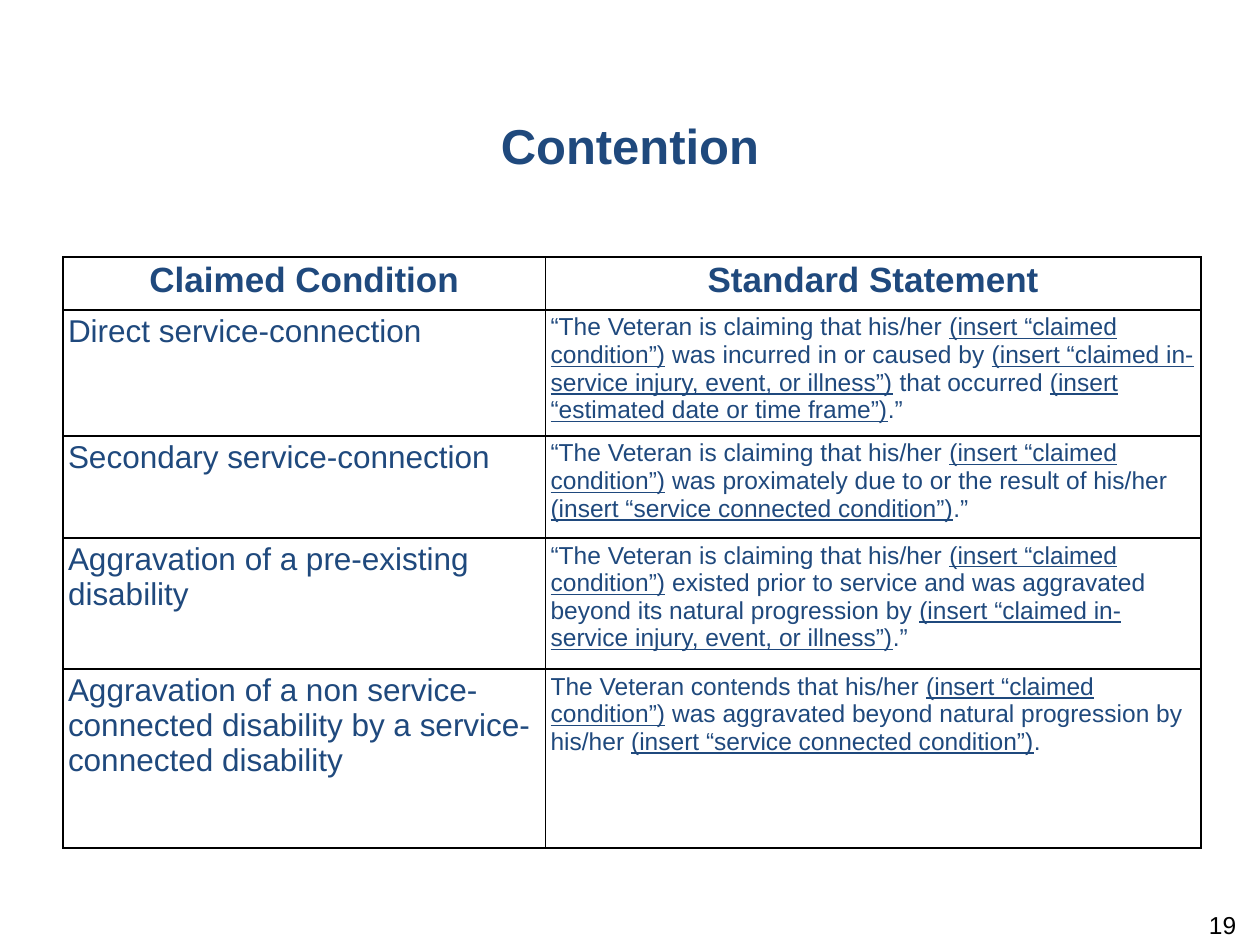
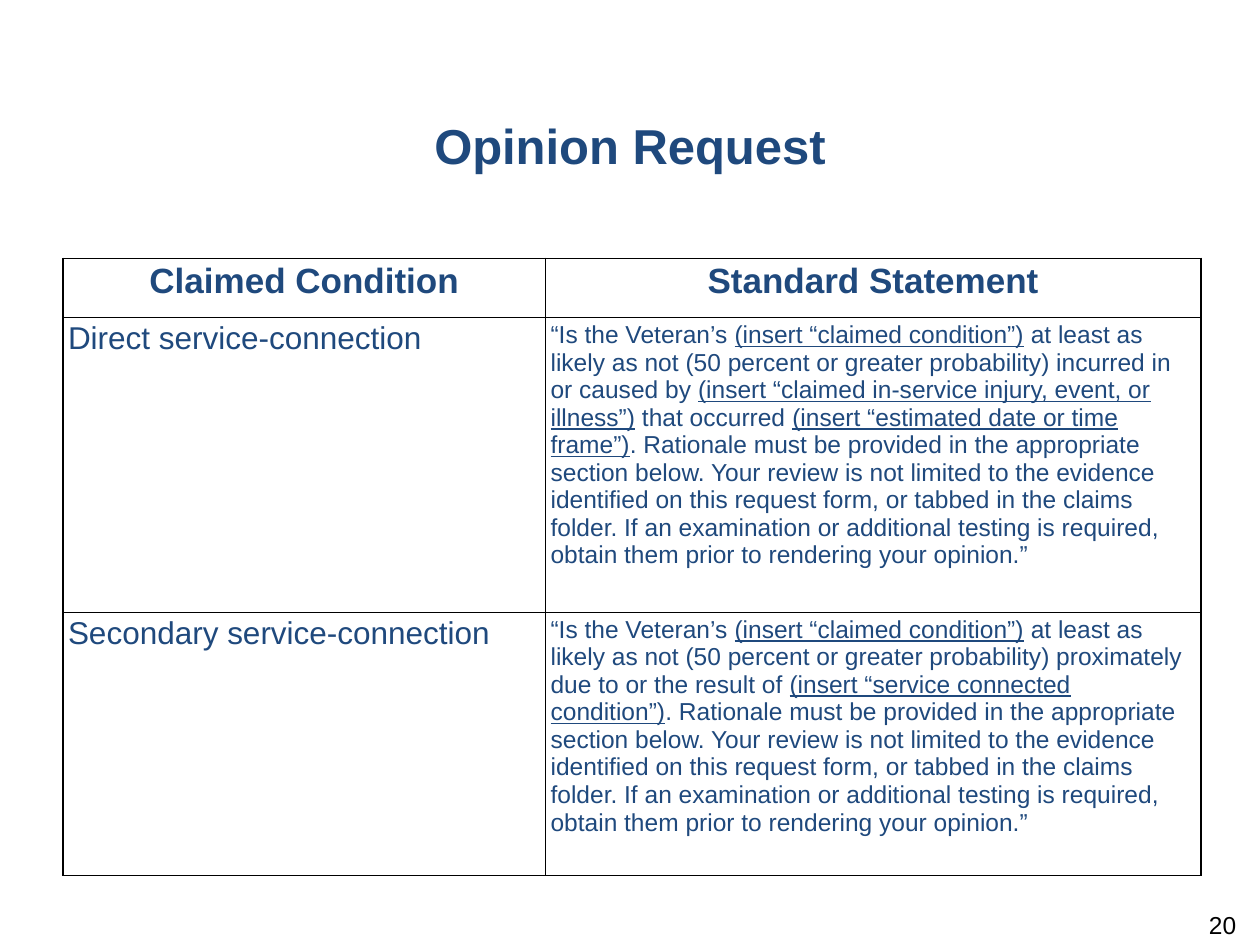
"""Build the two slides of standard statements for contentions and opinion requests."""
from lxml.etree import SubElement
from pptx import Presentation
from pptx.dml.color import RGBColor
from pptx.enum.text import MSO_ANCHOR, PP_ALIGN
from pptx.oxml.ns import qn
from pptx.util import Pt

PX = 9144
FONT = "Arial"
COLORS = {"navy": "1F497D", "black": "000000"}
LEFT, COLUMNS = 50, (383, 520)
HEADINGS = ("Claimed Condition", "Standard Statement")

CONDITION = "_(insert “claimed condition”)_"
EVENT = "_(insert “claimed in-service injury, event, or illness”)_"
DATE = "_(insert “estimated date or time frame”)_"
CONNECTED = "_(insert “service connected condition”)_"
CLAIM = f"“The Veteran is claiming that his/her {CONDITION}"
QUESTION = f"“Is the Veteran’s {CONDITION} at least as likely as not (50 percent or greater probability)"
RATIONALE = (
    "Rationale must be provided in the appropriate section below. Your review is not limited to "
    "the evidence identified on this request form, or tabbed in the claims folder. If an examination "
    "or additional testing is required, obtain them prior to rendering your opinion.”"
)

SLIDES = [
    {
        "title": "Contention", "page": "19", "top": 204, "heights": (42, 100, 81, 104, 142),
        "statements": [
            ("Direct service-connection",
             f"{CLAIM} was incurred in or caused by {EVENT} that occurred {DATE}.”"),
            ("Secondary service-connection",
             f"{CLAIM} was proximately due to or the result of his/her {CONNECTED}.”"),
            ("Aggravation of a pre-existing disability",
             f"{CLAIM} existed prior to service and was aggravated beyond its natural "
             f"progression by {EVENT}.”"),
            ("Aggravation of a non service-connected disability by a service-connected disability",
             f"The Veteran contends that his/her {CONDITION} was aggravated beyond natural "
             f"progression by his/her {CONNECTED}."),
        ],
    },
    {
        "title": "Opinion Request", "page": "20", "top": 205, "heights": (47, 234, 209),
        "statements": [
            ("Direct service-connection",
             f"{QUESTION} incurred in or caused by {EVENT} that occurred {DATE}. {RATIONALE}"),
            ("Secondary service-connection",
             f"{QUESTION} proximately due to or the result of {CONNECTED}. {RATIONALE}"),
        ],
    },
]


def write(paragraph, text, size, color="navy", bold=False, align=PP_ALIGN.LEFT, after=6):
    """Write text into a paragraph, underlining what stands between underscores."""
    paragraph.alignment = align
    paragraph.space_after = Pt(after)
    for index, part in enumerate(text.split("_")):
        run = paragraph.add_run()
        run.text = part
        run.font.name = FONT
        run.font.size = Pt(size)
        run.font.bold = bold
        run.font.underline = index % 2 == 1
        run.font.color.rgb = RGBColor.from_string(COLORS[color])


def frame_cell(cell):
    """Give a cell its margins, thin black borders and no fill."""
    cell.margin_left = cell.margin_right = 4 * PX
    cell.margin_top = cell.margin_bottom = 3 * PX
    cell.vertical_anchor = MSO_ANCHOR.TOP
    properties = cell._tc.get_or_add_tcPr()
    for side in ("a:lnL", "a:lnR", "a:lnT", "a:lnB"):
        border = SubElement(properties, qn(side), w=str(Pt(1)))
        SubElement(SubElement(border, qn("a:solidFill")), qn("a:srgbClr"), val=COLORS["black"])
    cell.fill.background()


deck = Presentation()
deck.slide_width, deck.slide_height = 1000 * PX, 750 * PX

for content in SLIDES:
    slide = deck.slides.add_slide(deck.slide_layouts[6])

    statements = slide.shapes.add_table(
        len(content["heights"]), len(COLUMNS), LEFT * PX, content["top"] * PX,
        sum(COLUMNS) * PX, sum(content["heights"]) * PX).table
    statements.first_row = statements.horz_banding = False
    for column, width in zip(statements.columns, COLUMNS):
        column.width = width * PX
    for row, height in zip(statements.rows, content["heights"]):
        row.height = height * PX
    for cell in statements.iter_cells():
        frame_cell(cell)

    for column, heading in enumerate(HEADINGS):
        write(statements.cell(0, column).text_frame.paragraphs[0], heading, 20,
              bold=True, align=PP_ALIGN.CENTER)
    for row, (condition, statement) in enumerate(content["statements"], start=1):
        write(statements.cell(row, 0).text_frame.paragraphs[0], condition, 18, after=5)
        write(statements.cell(row, 1).text_frame.paragraphs[0], statement, 14)

    title = slide.shapes.add_textbox(0, 87 * PX, 1000 * PX, 119 * PX).text_frame
    title.word_wrap = True
    write(title.paragraphs[0], content["title"], 28, bold=True, align=PP_ALIGN.CENTER)

    page = slide.shapes.add_textbox(758 * PX, 722 * PX, 233 * PX, 40 * PX).text_frame
    page.word_wrap = True
    page.margin_top = 0
    write(page.paragraphs[0], content["page"], 14, color="black", align=PP_ALIGN.RIGHT)

deck.save("out.pptx")
